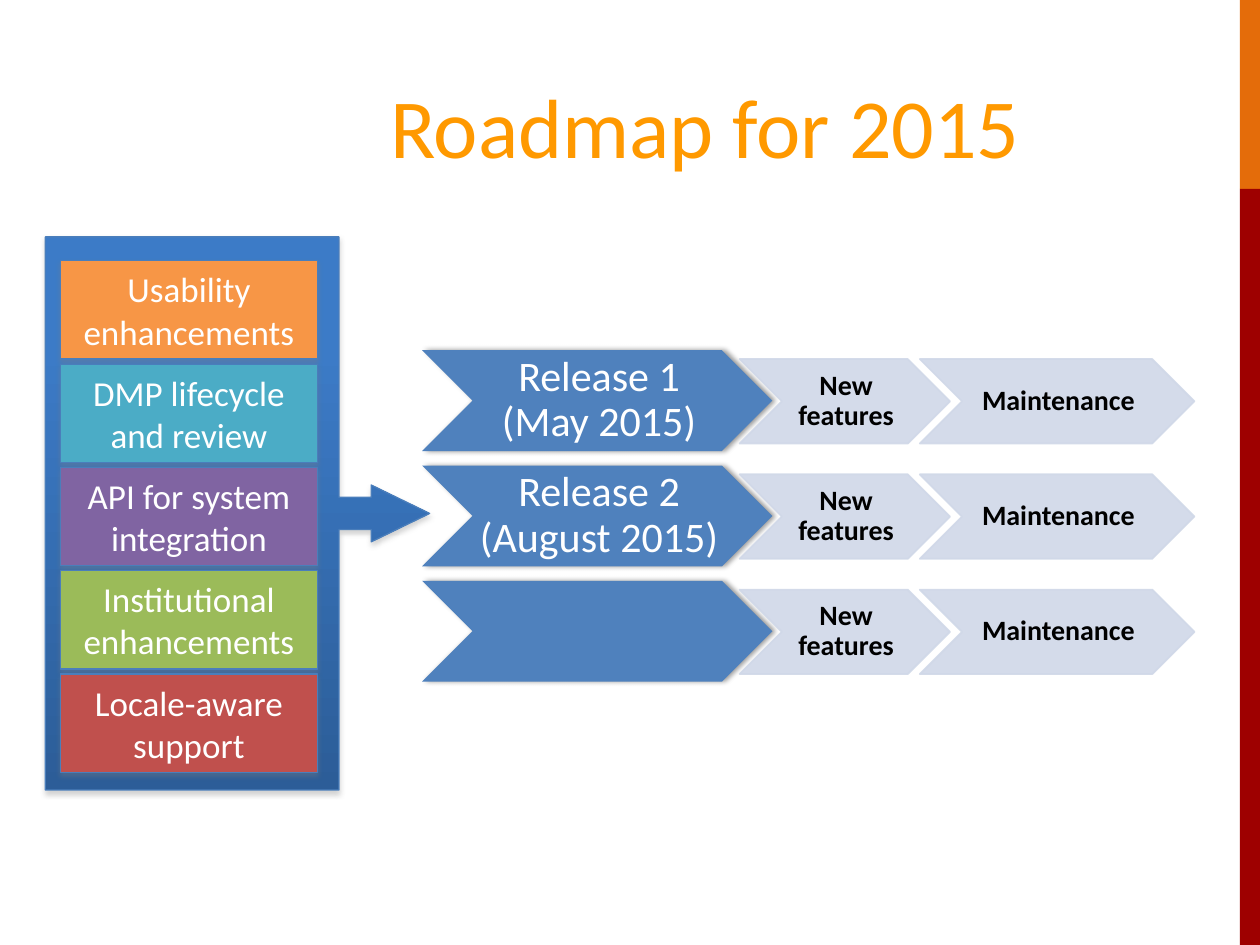
import pptx
import pptx.util
import pptx.dml.color
import pptx.enum.shapes
import pptx.enum.text
import pptx.oxml
import pptx.oxml.ns

Inches, Pt = pptx.util.Inches, pptx.util.Pt
RGB = pptx.dml.color.RGBColor.from_string
SHAPE = pptx.enum.shapes.MSO_SHAPE
CENTER = pptx.enum.text.PP_ALIGN.CENTER
MIDDLE = pptx.enum.text.MSO_ANCHOR.MIDDLE

TITLE = "Roadmap for 2015"
THEMES = [
    ("Usability enhancements", "F79646"),
    ("DMP lifecycle and review", "4BACC6"),
    ("API for system integration", "8064A2"),
    ("Institutional enhancements", "9BBB59"),
    ("Locale-aware support", "C0504D"),
]
RELEASES = ["Release 1\v(May 2015)", "Release 2\v(August 2015)", ""]
STAGES = [("New features", 5.87, 1.67), ("Maintenance", 7.3, 2.18)]
SIDE_BARS = [("E46C0A", 0, 1.5), ("9E0000", 1.5, 6)]

THEME = {
    "title": {"size": Pt(48), "name": "Calibri", "color": "FF9900"},
    "release": {"size": Pt(24), "name": "Calibri", "color": "FFFFFF"},
    "stage": {"size": Pt(16), "name": "Calibri", "color": "000000", "bold": True},
    "box": {"size": Pt(20), "name": "Calibri", "color": "FFFFFF"},
    "release_fill": "4F81BD",
    "stage_fill": "D0D8E8",
    "outline": "4A7EBB",
    "callout_stops": [(0.2, "3C7BC7"), (1, "2C5D98")],
    "soft_shadow": ("808080", 35, 90),
    "side_shadow": ("000000", 40, 0),
}
RELEASE_FRAME = {"margin_left": Inches(0.03), "margin_right": 0,
                 "margin_top": Inches(0.02), "margin_bottom": Inches(0.02)}
STAGE_FRAME = {"margin_left": Inches(0.02), "margin_right": 0,
               "margin_top": Inches(0.01), "margin_bottom": Inches(0.01)}


def add_shape(shapes, kind, place, fill=None, line=None, width=0.75, shadow=None):
    shape = shapes.add_shape(kind, *(Inches(value) for value in place))
    shape.shadow.inherit = False
    if fill:
        shape.fill.solid()
        shape.fill.fore_color.rgb = RGB(fill)
    if line:
        shape.line.color.rgb = RGB(line)
        shape.line.width = Pt(width)
    else:
        shape.line.fill.background()
    if shadow:
        color, alpha, angle = shadow
        effects = shape._element.spPr.find(pptx.oxml.ns.qn("a:effectLst"))
        effects.append(pptx.oxml.parse_xml(
            f'<a:outerShdw {pptx.oxml.ns.nsdecls("a")} blurRad="{Pt(3.1)}" '
            f'dist="{Pt(1.8)}" dir="{angle * 60000}" rotWithShape="0">'
            f'<a:srgbClr val="{color}"><a:alpha val="{alpha * 1000}"/></a:srgbClr>'
            '</a:outerShdw>'))
    return shape


def make_translucent(shape, percent):
    for color in shape._element.spPr.iter(pptx.oxml.ns.qn("a:srgbClr")):
        color.append(pptx.oxml.parse_xml(
            f'<a:alpha {pptx.oxml.ns.nsdecls("a")} val="{percent * 1000}"/>'))


def write(shape, text, style, frame_format=None, spacing=None):
    frame = shape.text_frame
    frame.word_wrap = True
    frame.vertical_anchor = MIDDLE
    for name, value in (frame_format or {}).items():
        setattr(frame, name, value)
    para = frame.paragraphs[0]
    para.text = text
    para.alignment = CENTER
    para.line_spacing = spacing
    for span in para.runs:
        for name, value in THEME[style].items():
            if name == "color":
                span.font.color.rgb = RGB(value)
            else:
                setattr(span.font, name, value)


def add_callout(page):
    callout = add_shape(page.shapes, SHAPE.RIGHT_ARROW_CALLOUT, (0.36, 1.88, 3.05, 4.39),
                        line=THEME["outline"], shadow=THEME["soft_shadow"])
    for index, value in enumerate((0.084, 0.074, 0.152, 0.764)):
        callout.adjustments[index] = value
    callout.fill.gradient()
    callout.fill.gradient_angle = 270
    for stop, (position, color) in zip(callout.fill.gradient_stops, THEME["callout_stops"]):
        stop.position = position
        stop.color.rgb = RGB(color)


def add_releases(page):
    group = page.shapes.add_group_shape()
    for row, release in enumerate(RELEASES):
        top = 2.78 + row * 0.915
        chevron = add_shape(group.shapes, SHAPE.CHEVRON, (3.35, top, 2.78, 0.8),
                            THEME["release_fill"], shadow=THEME["side_shadow"])
        if release:
            write(chevron, release, "release", RELEASE_FRAME, 0.9)
        for label, left, width in STAGES:
            chevron = add_shape(group.shapes, SHAPE.CHEVRON, (left, top + 0.07, width, 0.67),
                                THEME["stage_fill"], THEME["stage_fill"], 1)
            make_translucent(chevron, 90)
            write(chevron, label, "stage", STAGE_FRAME, 0.9)


def add_themes(page):
    group = page.shapes.add_group_shape()
    for row, (label, color) in enumerate(THEMES):
        box = add_shape(group.shapes, SHAPE.RECTANGLE, (0.48, 2.07 + row * 0.82, 2.04, 0.78),
                        color, THEME["outline"], shadow=THEME["soft_shadow"])
        write(box, label, "box")


def main():
    deck = pptx.Presentation()
    deck.slide_width, deck.slide_height = Inches(10), Inches(7.5)
    page = deck.slides.add_slide(deck.slide_layouts[5])
    for color, top, height in SIDE_BARS:
        add_shape(page.shapes, SHAPE.RECTANGLE, (9.84, top, 0.16, height), color)
    title = page.shapes.title
    place = {"left": 1.3, "top": 0.52, "width": 8.59, "height": 0.94}
    for name, value in place.items():
        setattr(title, name, Inches(value))
    write(title, TITLE, "title")
    add_callout(page)
    add_releases(page)
    add_themes(page)
    deck.save("out.pptx")


if __name__ == "__main__":
    main()
